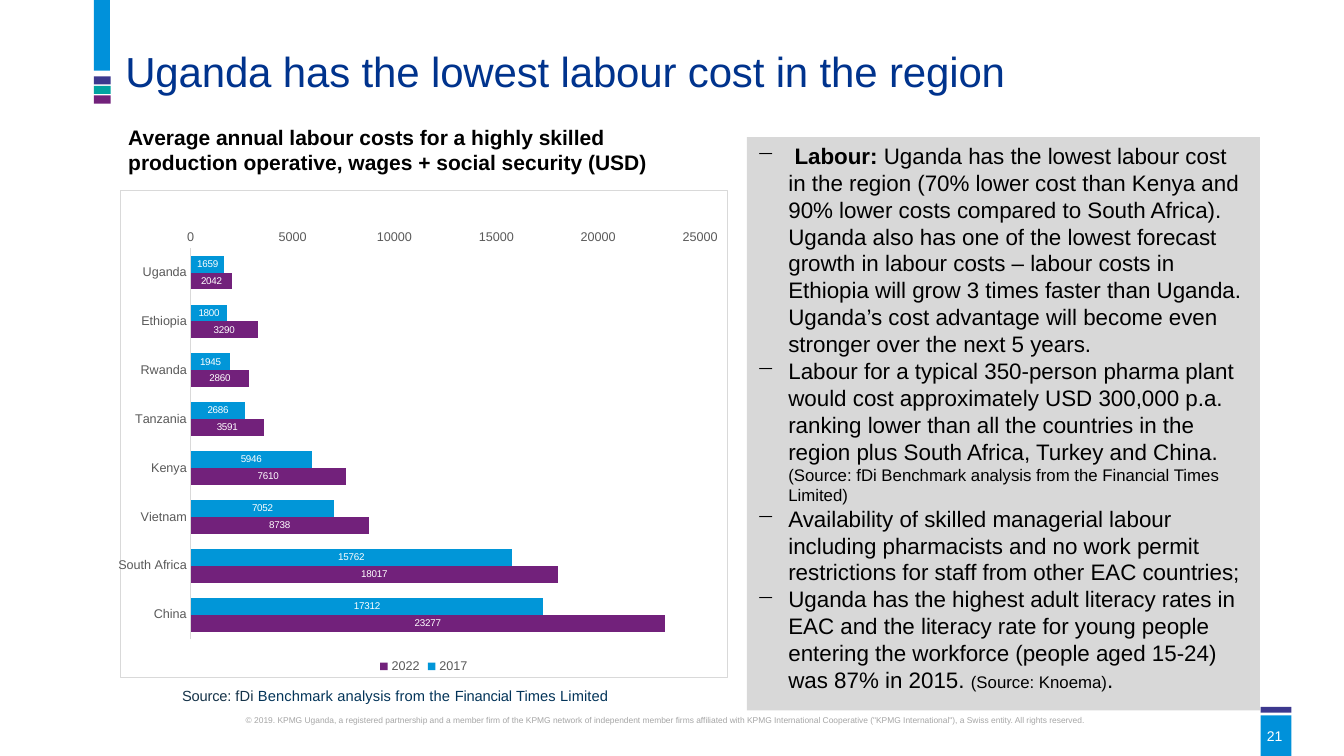
from lxml import etree
from pptx import Presentation
from pptx import util as u
from pptx.chart import data as chart_data
from pptx.dml import color
from pptx.enum import chart as ch
from pptx.enum import shapes, text
from pptx.oxml import parse_xml
from pptx.oxml import ns

COLOURS = {
    "blue": "0091DA", "violet": "3C388E", "teal": "00A3A1", "purple": "72217B",
    "bar_blue": "0196D8", "navy": "00338D", "ink": "163349", "source_blue": "033459",
    "panel": "D8D8D8", "rule": "D9D9D9", "label": "595959", "footer": "A6A6A6",
    "black": "000000", "white": "FFFFFF",
}
BRAND_BLOCKS = [
    (900.5, 511, 22, 29, "blue"), (900.5, 505, 22, 4, "violet"),
    (67, 0, 11.5, 50.5, "blue"), (67, 54.5, 12, 5.8, "violet"),
    (67, 61.3, 12, 5.8, "teal"), (67, 68.2, 12, 5.8, "purple"),
]
COPYRIGHT = (
    "© 2019. KPMG Uganda, a registered partnership and a member firm of the KPMG network of "
    "independent member firms affiliated with KPMG International Cooperative "
    "(\"KPMG International\"), a Swiss entity. All rights reserved."
)
SOURCE = [
    ("Source: ", 10.5, "ink", False, -10),
    ("fDi ", 10.5, "ink", False, 10),
    ("Benchmark analysis from the ", 10.5, "source_blue", False, 10),
    ("Financial ", 10.5, "source_blue", False, -10),
    ("Times Limited", 10.5, "source_blue", False, 10),
]
FINDINGS = [
    [(" Labour: ", 16, "black", True),
     ("Uganda has the lowest labour cost in the region (70% lower cost than Kenya and 90% lower "
      "costs compared to South Africa). Uganda also has one of the lowest forecast growth in "
      "labour costs – labour costs in Ethiopia will grow 3 times faster than Uganda. Uganda’s "
      "cost advantage will become even stronger over the next 5 years.", 16, "black")],
    [("Labour for a typical 350-person pharma plant would cost approximately USD 300,000 p.a. "
      "ranking lower than all the countries in the region plus South Africa, Turkey and China. ",
      16, "black"),
     ("(Source: fDi Benchmark analysis from the Financial Times Limited)", 12, "black")],
    [("Availability of skilled managerial labour including pharmacists and no work permit "
      "restrictions for staff from other EAC countries;", 16, "black")],
    [("Uganda has the highest adult literacy rates in EAC and the literacy rate for young people "
      "entering the workforce (people aged 15-24) was 87% in 2015. ", 16, "black"),
     ("(Source: Knoema)", 12, "black"), (".", 16, "black")],
]
COUNTRIES = ["Uganda", "Ethiopia", "Rwanda", "Tanzania", "Kenya", "Vietnam",
             "South Africa", "China"]
LABOUR_COSTS = {
    "2017": ([1659, 1800, 1945, 2686, 5946, 7052, 15762, 17312], "bar_blue"),
    "2022": ([2042, 3290, 2860, 3591, 7610, 8738, 18017, 23277], "purple"),
}
PLOT_AREA = {"x": 0.116, "y": 0.119, "w": 0.839, "h": 0.802}


def rgb(name):
    return color.RGBColor.from_string(COLOURS[name])


def apply(target, values):
    for name, value in values.items():
        setattr(target, name, value)


def style_font(font, size, colour, bold=False):
    apply(font, {"name": "Arial", "size": u.Pt(size), "bold": bold})
    font.color.rgb = rgb(colour)


def add_block(slide, left, top, width, height, fill):
    block = slide.shapes.add_shape(shapes.MSO_SHAPE.RECTANGLE, u.Pt(left), u.Pt(top),
                                   u.Pt(width), u.Pt(height))
    block.shadow.inherit = False
    block.fill.solid()
    block.fill.fore_color.rgb = rgb(fill)
    block.line.fill.background()
    return block


def add_runs(paragraph, runs):
    for wording, size, colour, *extras in runs:
        run = paragraph.add_run()
        run.text = wording
        style_font(run.font, size, colour, *extras[:1])
        if len(extras) > 1:
            run._r.get_or_add_rPr().set("spc", str(extras[1]))


def add_text(slide, box, runs, frame_format=None, paragraph_format=None, inset=None):
    frame = slide.shapes.add_textbox(*map(u.Pt, box)).text_frame
    apply(frame, {"word_wrap": True, **(frame_format or {})})
    if inset is not None:
        sides = ("left", "top", "right", "bottom")
        apply(frame, {f"margin_{side}": u.Pt(inset) for side in sides})
    paragraph = frame.paragraphs[0]
    apply(paragraph, paragraph_format or {})
    add_runs(paragraph, runs)
    return paragraph


def add_findings(slide):
    frame = add_block(slide, 533.5, 98, 366.5, 409.5, "panel").text_frame
    apply(frame, {"word_wrap": True, "vertical_anchor": text.MSO_ANCHOR.TOP})
    for index, runs in enumerate(FINDINGS):
        paragraph = frame.add_paragraph() if index else frame.paragraphs[0]
        paragraph.alignment = text.PP_ALIGN.LEFT
        properties = paragraph._p.get_or_add_pPr()
        properties.set("marL", str(u.Pt(22.5)))
        properties.set("indent", str(-u.Pt(22.5)))
        etree.SubElement(properties, ns.qn("a:buChar")).set("char", "−")
        add_runs(paragraph, runs)


def set_plot_area(chart):
    plot_area = chart._chartSpace.chart.plotArea
    for layout in plot_area.findall(ns.qn("c:layout")):
        plot_area.remove(layout)
    layout = etree.Element(ns.qn("c:layout"))
    manual = etree.SubElement(layout, ns.qn("c:manualLayout"))
    settings = {"layoutTarget": "inner", "xMode": "edge", "yMode": "edge", **PLOT_AREA}
    for tag, value in settings.items():
        etree.SubElement(manual, ns.qn(f"c:{tag}")).set("val", str(value))
    plot_area.insert(0, layout)


def set_border(chart):
    chart._chartSpace.chart.addnext(parse_xml(
        f'<c:spPr {ns.nsdecls("c", "a")}><a:noFill/><a:ln w="{u.Pt(0.75)}"><a:solidFill>'
        f'<a:srgbClr val="{COLOURS["rule"]}"/></a:solidFill></a:ln></c:spPr>'))


def add_cost_chart(slide):
    costs = chart_data.CategoryChartData(number_format="General")
    costs.categories = COUNTRIES
    for year, (values, _) in LABOUR_COSTS.items():
        costs.add_series(year, values)
    chart = slide.shapes.add_chart(ch.XL_CHART_TYPE.BAR_CLUSTERED, u.Pt(84.5), u.Pt(135.5),
                                   u.Pt(435.5), u.Pt(349), costs).chart
    style_font(chart.font, 10, "black")
    apply(chart, {"has_title": False, "has_legend": True})
    apply(chart.legend, {"position": ch.XL_LEGEND_POSITION.BOTTOM, "include_in_layout": False})
    style_font(chart.legend.font, 9, "label")
    for axis in (chart.category_axis, chart.value_axis):
        apply(axis, {"has_major_gridlines": False, "major_tick_mark": ch.XL_TICK_MARK.NONE,
                     "minor_tick_mark": ch.XL_TICK_MARK.NONE})
        style_font(axis.tick_labels.font, 9, "label")
    chart.category_axis.reverse_order = True
    chart.category_axis.format.line.color.rgb = rgb("rule")
    chart.category_axis.format.line.width = u.Pt(0.75)
    apply(chart.value_axis, {"minimum_scale": 0, "maximum_scale": 25000, "major_unit": 5000})
    chart.value_axis.format.line.fill.background()
    plot = chart.plots[0]
    apply(plot, {"gap_width": 90, "overlap": 0, "vary_by_categories": False})
    for series, (_, colour) in zip(plot.series, LABOUR_COSTS.values()):
        series.format.fill.solid()
        series.format.fill.fore_color.rgb = rgb(colour)
        labels = series.data_labels
        apply(labels, {"show_value": True, "position": ch.XL_LABEL_POSITION.CENTER})
        style_font(labels.font, 7, "white")
    set_plot_area(chart)
    set_border(chart)


def main():
    deck = Presentation()
    apply(deck, {"slide_width": u.Pt(960), "slide_height": u.Pt(540)})
    slide = deck.slides.add_slide(deck.slide_layouts[6])
    for block in BRAND_BLOCKS:
        add_block(slide, *block)
    add_text(slide, (880.5, 520, 35.5, 11.5), [("21", 10, "white")],
             {"vertical_anchor": text.MSO_ANCHOR.BOTTOM},
             {"alignment": text.PP_ALIGN.RIGHT}, inset=0)
    add_text(slide, (175.5, 511, 610.5, 15), [(COPYRIGHT, 6, "footer")], inset=0)
    source = add_text(slide, (120.25, 484.5, 329, 22.5), SOURCE, {"word_wrap": False},
                      {"line_spacing": 1.2})
    source_indent = source._p.get_or_add_pPr()
    source_indent.set("marL", str(u.Pt(0.75)))
    source_indent.set("indent", str(u.Pt(2)))
    add_findings(slide)
    add_text(slide, (85, 28, 737, 59),
             [("Uganda has the lowest labour cost in the region", 30, "navy", False, -10)],
             paragraph_format={"space_after": u.Pt(6)}, inset=4.5)
    add_cost_chart(slide)
    add_text(slide, (84.5, 85.5, 394.5, 41),
             [("Average annual labour costs for a highly skilled production operative, "
               "wages + social security (USD)", 15, "black", True)],
             paragraph_format={"space_after": u.Pt(6)})
    deck.save("out.pptx")


if __name__ == "__main__":
    main()
